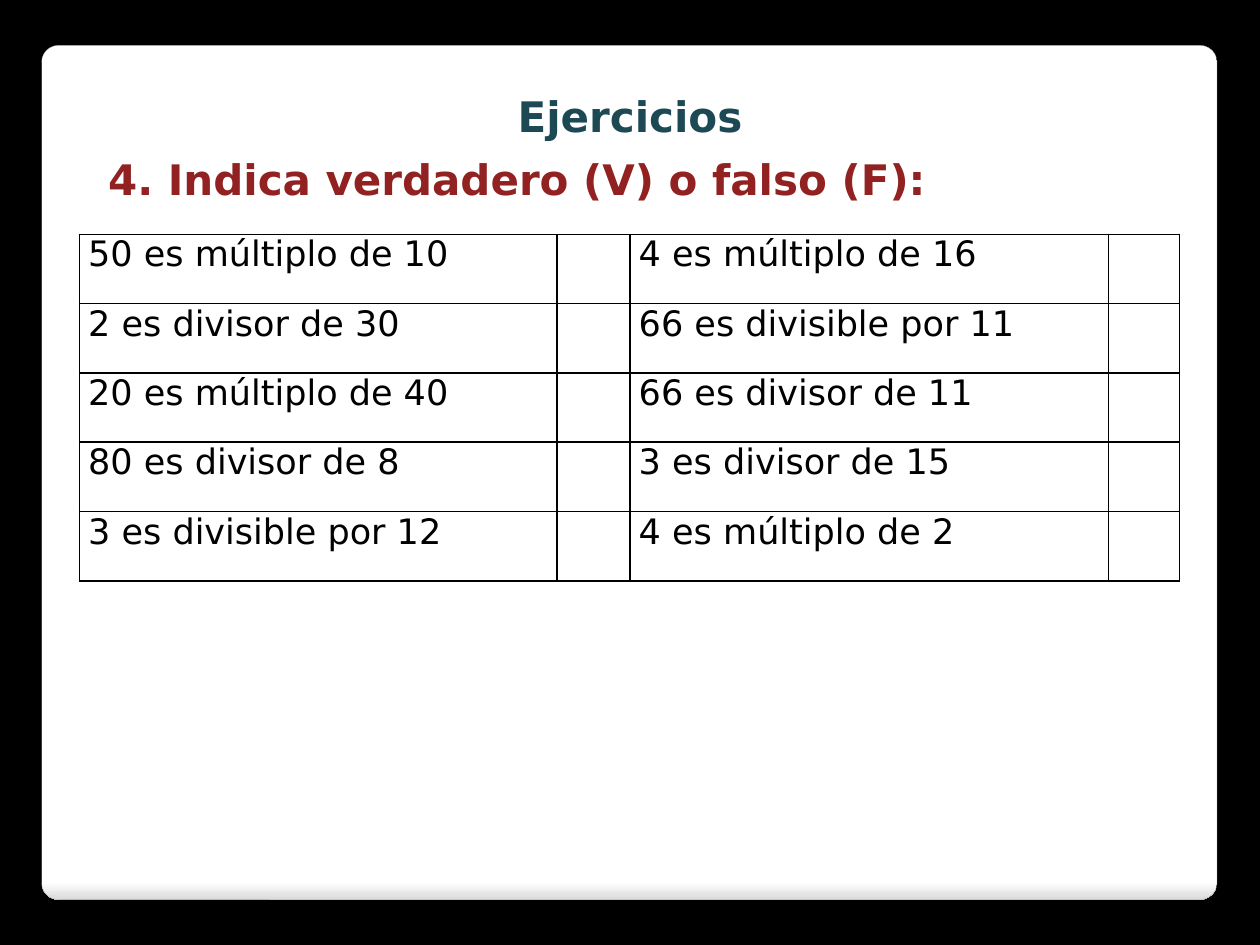
from lxml import etree
from pptx import Presentation
from pptx.dml.color import RGBColor
from pptx.enum import shapes, text
from pptx.oxml import parse_xml
from pptx.oxml.ns import nsdecls
from pptx.util import Inches, Pt

COLORS = {"black": "000000", "white": "FFFFFF", "edge": "DADADA",
          "outline": "A4A4A4", "title": "1C4954", "question": "922222"}
STATEMENTS = [
    ("50 es múltiplo de 10", "4 es múltiplo de 16"),
    ("2 es divisor de 30", "66 es divisible por 11"),
    ("20 es múltiplo de 40", "66 es divisor de 11"),
    ("80 es divisor de 8", "3 es divisor de 15"),
    ("3 es divisible por 12", "4 es múltiplo de 2"),
]
COLUMN_WIDTHS = [3.79, 0.58, 3.8, 0.56]
ROW_HEIGHT = 0.55


def color(name):
    return RGBColor.from_string(COLORS[name])


class ExerciseSlide:
    font = "DejaVu Sans"

    def __init__(self, page):
        self.page = page
        page.background.fill.solid()
        page.background.fill.fore_color.rgb = color("black")

    def set_text(self, frame, words, size, color_name, bold=False, align=None):
        frame.text = words
        frame.word_wrap = True
        para = frame.paragraphs[0]
        para.alignment = align
        for span in para.runs:
            span.font.name = self.font
            span.font.size = Pt(size)
            span.font.bold = bold
            span.font.color.rgb = color(color_name)

    def card(self, left, top, width, height):
        """Rounded panel behind everything, shaded along its lower edge."""
        panel = self.page.shapes.add_shape(
            shapes.MSO_SHAPE.ROUNDED_RECTANGLE,
            Inches(left), Inches(top), Inches(width), Inches(height))
        panel.adjustments[0] = 0.02
        panel.fill.gradient()
        panel.fill.gradient_angle = 270
        stops = zip(panel.fill.gradient_stops, [(0.98, "white"), (1, "edge")])
        for stop, (position, name) in stops:
            stop.position = position
            stop.color.rgb = color(name)
        panel.line.color.rgb = color("outline")
        panel.line.width = Pt(0.16)
        panel.shadow.inherit = False
        effects = panel.element.spPr.find("{*}effectLst")
        effects.append(parse_xml(
            f'<a:outerShdw {nsdecls("a")} blurRad="{Pt(6)}" dist="{Pt(4)}" dir="5400000">'
            f'<a:srgbClr val="{COLORS["black"]}"><a:alpha val="25000"/></a:srgbClr>'
            '</a:outerShdw>'))
        self.page.shapes.title.element.addprevious(panel.element)

    def title(self, words, left, top, width, height):
        box = self.page.shapes.title
        box.left, box.top = Inches(left), Inches(top)
        box.width, box.height = Inches(width), Inches(height)
        box.text_frame.vertical_anchor = text.MSO_ANCHOR.TOP
        self.set_text(box.text_frame, words, 24, "title", True, text.PP_ALIGN.CENTER)

    def question(self, words, left, top, width, height):
        box = self.page.shapes.add_textbox(
            Inches(left), Inches(top), Inches(width), Inches(height))
        self.set_text(box.text_frame, words, 24, "question", True)

    def border(self, cell):
        properties = cell._tc.get_or_add_tcPr()
        for side in ("lnL", "lnR", "lnT", "lnB"):
            properties.append(etree.fromstring(
                f'<a:{side} {nsdecls("a")} w="{Pt(1)}"><a:solidFill>'
                f'<a:srgbClr val="{COLORS["black"]}"/></a:solidFill></a:{side}>'))

    def answer_table(self, rows, left, top):
        """Statements, each followed by an empty cell for the answer."""
        table = self.page.shapes.add_table(
            len(rows), len(COLUMN_WIDTHS), Inches(left), Inches(top),
            Inches(sum(COLUMN_WIDTHS)), Inches(ROW_HEIGHT * len(rows))).table
        table.first_row = table.horz_banding = False
        for column, width in zip(table.columns, COLUMN_WIDTHS):
            column.width = Inches(width)
        for row, (first, second) in zip(table.rows, rows):
            row.height = Inches(ROW_HEIGHT)
            for cell, words in zip(row.cells, (first, "", second, "")):
                cell.margin_left = cell.margin_right = Inches(0.07)
                cell.margin_top = cell.margin_bottom = 0
                self.border(cell)
                cell.fill.solid()
                cell.fill.fore_color.rgb = color("white")
                if words:
                    self.set_text(cell.text_frame, words, 20, "black")


def main():
    deck = Presentation()
    deck.slide_width, deck.slide_height = Inches(10), Inches(7.5)
    slide = ExerciseSlide(deck.slides.add_slide(deck.slide_layouts[5]))
    slide.card(0.33, 0.36, 9.33, 6.78)
    slide.title("Ejercicios", 0.39, 0.67, 9.22, 0.5)
    slide.question("4. Indica verdadero (V) o falso (F):", 0.76, 1.17, 8.2, 0.5)
    slide.answer_table(STATEMENTS, 0.63, 1.86)
    deck.save("out.pptx")


if __name__ == "__main__":
    main()
